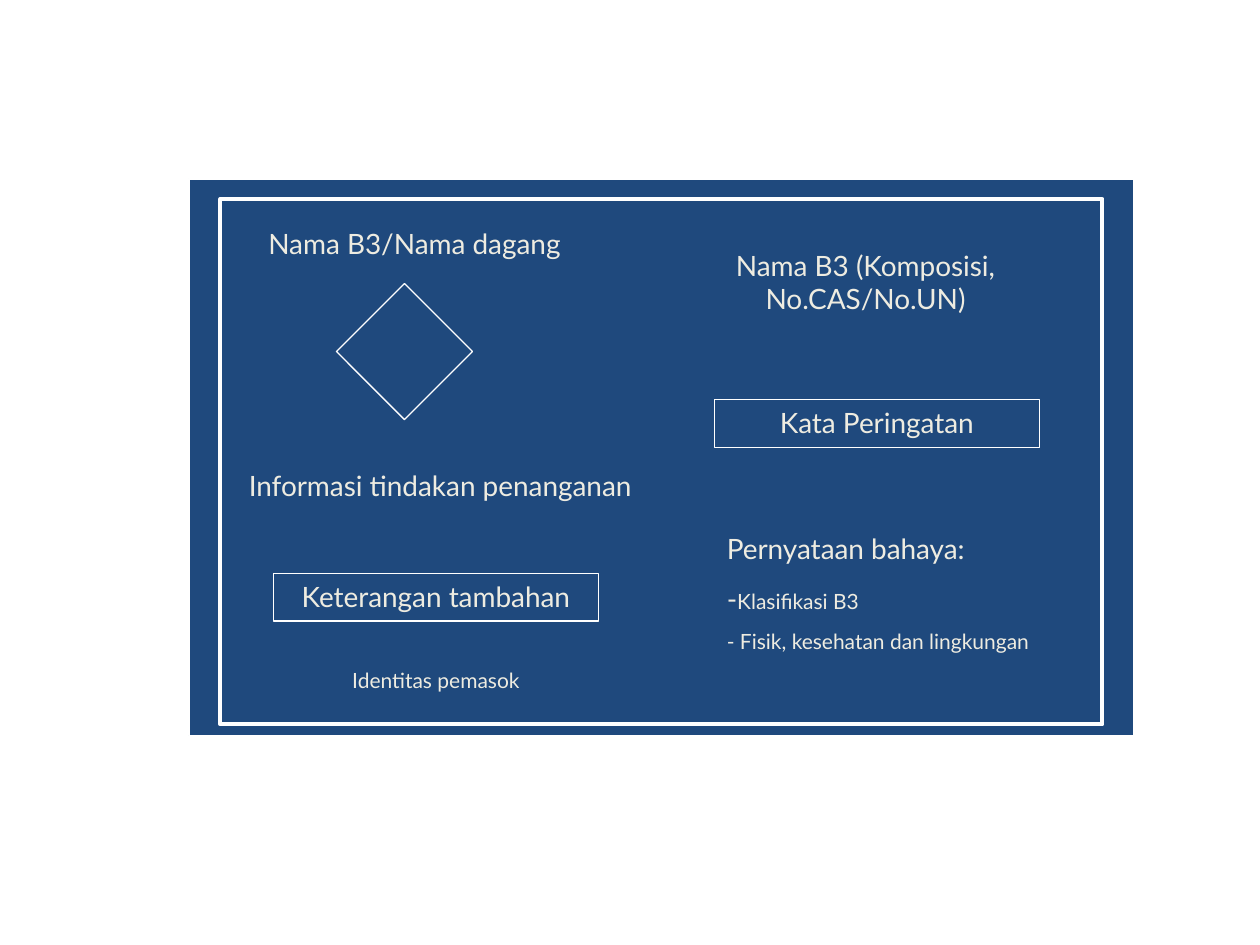
from dataclasses import dataclass

from pptx import Presentation
from pptx.dml.color import RGBColor
from pptx.enum import shapes, text
from pptx.util import Inches, Pt

COLORS = {"panel": "1F497D", "outline": "FFFFFF", "text": "EEECE1"}
FONT = "Lato"
LARGE, SMALL = 16, 12
CENTER, JUSTIFY = text.PP_ALIGN.CENTER, text.PP_ALIGN.JUSTIFY
RECTANGLE, DIAMOND = shapes.MSO_SHAPE.RECTANGLE, shapes.MSO_SHAPE.DIAMOND


@dataclass
class Box:
    left: float
    top: float
    width: float
    height: float


@dataclass
class Outline:
    box: Box
    kind: shapes.MSO_SHAPE = RECTANGLE
    weight: float = 0.75
    fill: str = ""


@dataclass
class Run:
    words: str
    size: int = LARGE


@dataclass
class Label:
    box: Box
    paragraphs: list[list[Run]]
    align: text.PP_ALIGN = CENTER
    framed: bool = False


OUTLINES = [
    Outline(Box(1.5, 1.42, 7.5, 4.42), fill="panel"),
    Outline(Box(1.75, 1.58, 7, 4.17), weight=2.25),
    Outline(Box(2.67, 2.25, 1.08, 1.08), DIAMOND),
]

LABELS = [
    Label(Box(2, 1.75, 2.58, 0.37), [[Run("Nama B3/Nama dagang")]]),
    Label(Box(5.58, 1.92, 2.58, 0.64), [[Run("Nama B3 (Komposisi, No.CAS/No.UN)")]]),
    Label(Box(1.58, 3.67, 3.83, 0.37), [[Run("Informasi tindakan penanganan")]]),
    Label(Box(2.17, 4.55, 2.58, 0.38), [[Run("Keterangan tambahan")]], framed=True),
    Label(Box(2.17, 5.25, 2.58, 0.3), [[Run("Identitas pemasok", SMALL)]]),
    Label(Box(5.67, 3.17, 2.58, 0.38), [[Run("Kata Peringatan")]], framed=True),
    Label(
        Box(5.67, 4.17, 2.92, 1.07),
        [
            [Run("Pernyataan bahaya:")],
            [Run("-"), Run("Klasifikasi B3", SMALL)],
            [Run("- Fisik, kesehatan dan lingkungan", SMALL)],
        ],
        align=JUSTIFY,
    ),
]


def color(name: str) -> RGBColor:
    return RGBColor.from_string(COLORS[name])


def lengths(box: Box) -> list[int]:
    return [Inches(value) for value in (box.left, box.top, box.width, box.height)]


def draw_outline(slide, outline: Outline):
    shape = slide.shapes.add_shape(outline.kind, *lengths(outline.box))
    shape.shadow.inherit = False
    if outline.fill:
        shape.fill.solid()
        shape.fill.fore_color.rgb = color(outline.fill)
    else:
        shape.fill.background()
    shape.line.color.rgb = color("outline")
    shape.line.width = Pt(outline.weight)
    return shape


def draw_label(slide, label: Label) -> None:
    if label.framed:
        shape = draw_outline(slide, Outline(label.box))
    else:
        shape = slide.shapes.add_textbox(*lengths(label.box))
    frame = shape.text_frame
    frame_format = {
        "word_wrap": True,
        "auto_size": text.MSO_AUTO_SIZE.SHAPE_TO_FIT_TEXT,
        "vertical_anchor": text.MSO_ANCHOR.TOP,
    }
    for name, value in frame_format.items():
        setattr(frame, name, value)

    for index, runs in enumerate(label.paragraphs):
        paragraph = frame.add_paragraph() if index else frame.paragraphs[0]
        paragraph.alignment = label.align
        # Half a line of space between paragraphs; a line is 1.2 times the size.
        paragraph.space_before = Pt(0.6 * runs[0].size if index else 0)
        for item in runs:
            run = paragraph.add_run()
            run.text = item.words
            run.font.name = FONT
            run.font.size = Pt(item.size)
            run.font.color.rgb = color("text")


def main() -> None:
    presentation = Presentation()
    presentation.slide_width, presentation.slide_height = Inches(10), Inches(7.5)
    slide = presentation.slides.add_slide(presentation.slide_layouts[6])
    for outline in OUTLINES:
        draw_outline(slide, outline)
    for label in LABELS:
        draw_label(slide, label)
    presentation.save("out.pptx")


if __name__ == "__main__":
    main()
